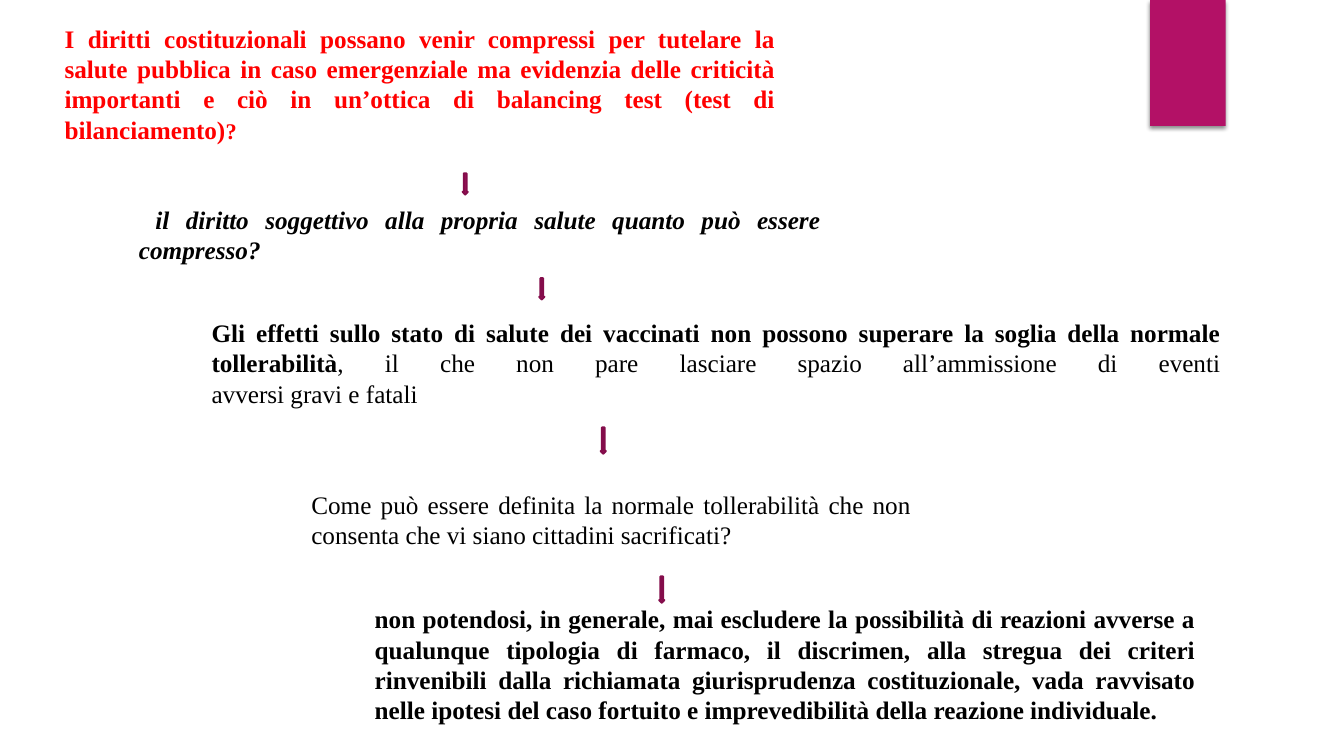
from lxml.etree import SubElement
from pptx import Presentation
from pptx.dml.color import RGBColor
from pptx.enum.shapes import MSO_SHAPE as Preset
from pptx.enum.text import MSO_ANCHOR as Anchor, MSO_AUTO_SIZE as AutoSize, PP_ALIGN as Align
from pptx.oxml.ns import qn
from pptx.util import Pt

COLORS = {"accent": "B31166", "edge": "840D4B", "question": "FF0000", "text": "000000"}
FONT = "Times New Roman"

# Spans are (text, size, style); style holds b for bold and i for italic.
QUESTION = [
    ("I diritti costituzionali possano venir compressi per tutelare la salute pubblica "
     "in caso emergenziale ma evidenzia delle criticità importanti e ciò in un’ottica di "
     "balancing test (test di bilanciamento)", 18, "b"),
    ("?", 16, "b"),
]
QUESTION_AREA = (38.9, 13, 522, 94.3)

# Each step: area (left, top, width, height), line spacing, spans
STEPS = [
    ((92.2, 141.8, 501.1, 51.1), 22, [
        (" il diritto soggettivo alla propria salute quanto può essere compresso?", 18, "bi")]),
    ((144, 223.2, 735.1, 72.7), 21.6, [
        ("Gli effetti sullo stato di salute dei vaccinati non possono superare la soglia "
         "della normale\ntollerabilità", 18, "b"),
        (", il che non pare lasciare spazio all’ammissione di eventi\n"
         "avversi gravi e fatali", 18, "")]),
    ((215.3, 345.6, 442.8, 51.1), 21.6, [
        ("Come può essere definita la normale tollerabilità che non consenta che vi siano "
         "cittadini sacrificati?", 18, "")]),
    ((260.6, 427.7, 600.5, 94.3), 21.6, [
        ("non potendosi, in generale, mai escludere la possibilità di reazioni avverse a "
         "qualunque tipologia di farmaco, il discrimen, alla stregua dei criteri rinvenibili "
         "dalla richiamata giurisprudenza costituzionale, vada ravvisato nelle ipotesi del "
         "caso fortuito e imprevedibilità della reazione individuale.", 18, "b")]),
]
ARROW_WIDTH = 3.6
ARROWS = [(330.5, 123.8, 15.1), (385.2, 198.7, 15.1),
          (429.1, 305.3, 18.7), (470.9, 411.8, 18.7)]  # left, top, height
CORNER_TAB = (821.5, 0, 54, 90)


def color(name):
    return RGBColor.from_string(COLORS[name])


def points(area):
    return [Pt(length) for length in area]


def write(box, spans, spacing, ink):
    frame = box.text_frame
    frame.word_wrap = True
    frame.auto_size = AutoSize.SHAPE_TO_FIT_TEXT
    frame.vertical_anchor = Anchor.TOP
    para = frame.paragraphs[0]
    para.alignment = Align.JUSTIFY
    para.line_spacing = Pt(spacing)
    for text, size, style in spans:
        for index, line in enumerate(text.split("\n")):
            if index:
                para.add_line_break()
            span = para.add_run()
            span.text = line
            font = span.font
            font.name, font.size = FONT, Pt(size)
            font.bold, font.italic = "b" in style, "i" in style
            font.color.rgb = color(ink)


def add_filled(page, preset, area):
    shape = page.shapes.add_shape(preset, *points(area))
    shape.shadow.inherit = False
    shape.fill.solid()
    shape.fill.fore_color.rgb = color("accent")
    return shape


def add_drop_shadow(shape):
    effects = shape._element.spPr.find(qn("a:effectLst"))
    shadow = SubElement(effects, qn("a:outerShdw"), blurRad=str(Pt(3)), dist=str(Pt(2)),
                        dir="5400000", rotWithShape="0")
    black = SubElement(shadow, qn("a:srgbClr"), val=COLORS["text"])
    SubElement(black, qn("a:alpha"), val="45000")


def main():
    deck = Presentation()
    deck.slide_width, deck.slide_height = Pt(960), Pt(540)
    page = deck.slides.add_slide(deck.slide_layouts[5])

    title = page.shapes.title
    title.left, title.top, title.width, title.height = points(QUESTION_AREA)
    write(title, QUESTION, 21.6, "question")

    corner_tab = add_filled(page, Preset.RECTANGLE, CORNER_TAB)
    corner_tab.line.fill.background()
    add_drop_shadow(corner_tab)

    for area, spacing, spans in STEPS:
        write(page.shapes.add_textbox(*points(area)), spans, spacing, "text")

    for left, top, height in ARROWS:
        arrow = add_filled(page, Preset.DOWN_ARROW, (left, top, ARROW_WIDTH, height))
        arrow.line.color.rgb = color("edge")
        arrow.line.width = Pt(1.5)

    deck.save("out.pptx")


if __name__ == "__main__":
    main()
